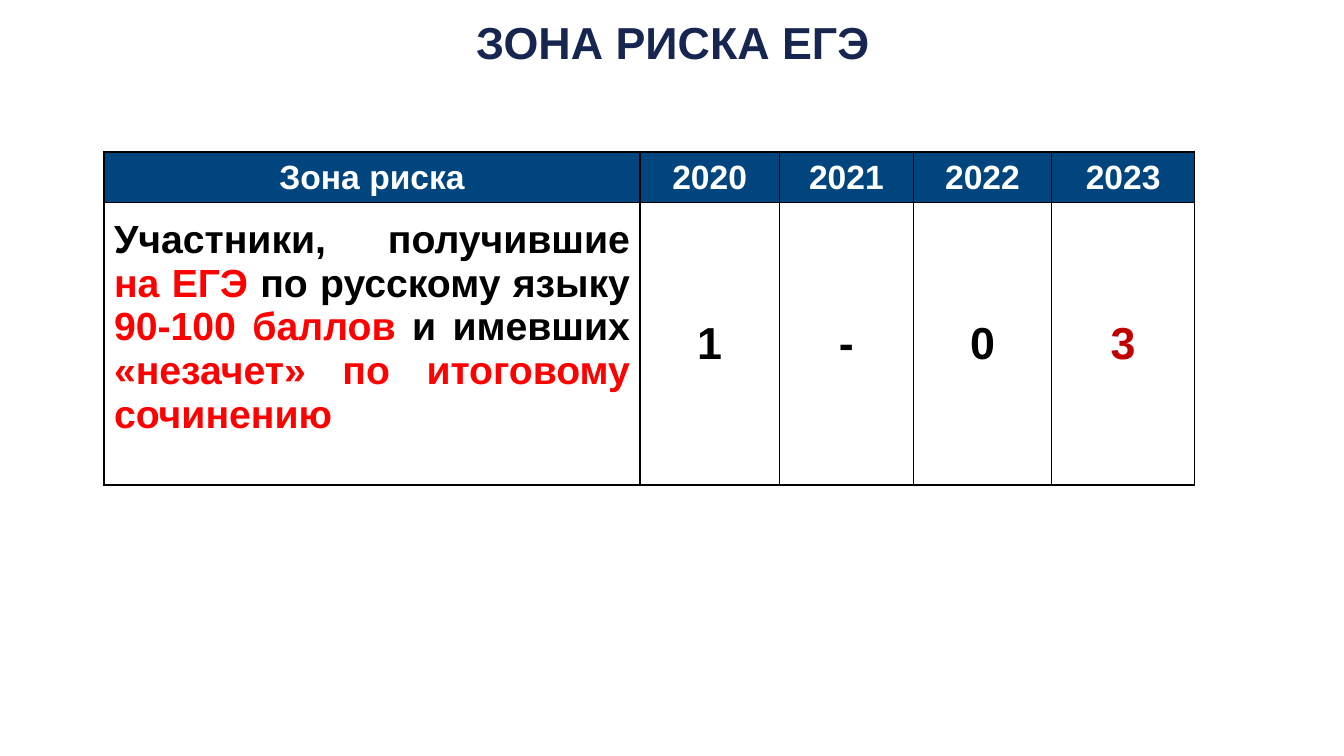
from lxml import etree
from pptx import Presentation
from pptx.dml.color import RGBColor
from pptx.enum import text
from pptx.oxml import ns
from pptx.util import Cm, Pt

FONT = "Arial"
NAVY = RGBColor(0x17, 0x25, 0x51)
BLUE = RGBColor(0x00, 0x45, 0x7E)
WHITE = RGBColor(0xFF, 0xFF, 0xFF)
BLACK = RGBColor(0x00, 0x00, 0x00)
RED = RGBColor(0xFF, 0x00, 0x00)
DARK_RED = RGBColor(0xC0, 0x00, 0x00)

HEADERS = ["Зона риска", "2020", "2021", "2022", "2023"]
CRITERION = [
    ("Участники, получившие ", BLACK),
    ("на ЕГЭ ", RED),
    ("по русскому языку ", BLACK),
    ("90-100 баллов ", RED),
    ("и имевших ", BLACK),
    ("«незачет» по итоговому сочинению", RED),
]
VALUES = [("1", BLACK), ("-", BLACK), ("0", BLACK), ("3", DARK_RED)]
COLUMN_WIDTHS = [13.51, 3.51, 3.38, 3.48, 3.61]
ROW_HEIGHTS = [1.28, 7.11]


def write_runs(paragraph, parts, size, alignment=text.PP_ALIGN.CENTER):
    paragraph.alignment = alignment
    for words, color in parts:
        run = paragraph.add_run()
        run.text = words
        run.font.name = FONT
        run.font.size = Pt(size)
        run.font.bold = True
        run.font.color.rgb = color


def add_borders(cell):
    properties = cell._tc.get_or_add_tcPr()
    for position, side in enumerate(("lnL", "lnR", "lnT", "lnB")):
        line = etree.Element(ns.qn(f"a:{side}"), w=str(Pt(1)))
        fill = etree.SubElement(line, ns.qn("a:solidFill"))
        etree.SubElement(fill, ns.qn("a:srgbClr"), val=str(BLACK))
        properties.insert(position, line)


def fill_cell(cell, parts, size, background, alignment=text.PP_ALIGN.CENTER):
    cell.fill.solid()
    cell.fill.fore_color.rgb = background
    cell.vertical_anchor = text.MSO_ANCHOR.MIDDLE
    write_runs(cell.text_frame.paragraphs[0], parts, size, alignment)
    add_borders(cell)


def add_title(slide, left, top, width, height):
    text_frame = slide.shapes.add_textbox(left, top, width, height).text_frame
    text_frame.word_wrap = True
    write_runs(text_frame.paragraphs[0], [("ЗОНА РИСКА ЕГЭ", NAVY)], 32)


def add_risk_table(slide, left, top):
    width, height = Cm(sum(COLUMN_WIDTHS)), Cm(sum(ROW_HEIGHTS))
    table = slide.shapes.add_table(
        len(ROW_HEIGHTS), len(COLUMN_WIDTHS), left, top, width, height
    ).table
    for column, column_width in zip(table.columns, COLUMN_WIDTHS):
        column.width = Cm(column_width)
    for row, row_height in zip(table.rows, ROW_HEIGHTS):
        row.height = Cm(row_height)

    # Header row
    for index, header in enumerate(HEADERS):
        fill_cell(table.cell(0, index), [(header, WHITE)], 24, BLUE)

    # Criterion, set slightly above the middle of its cell
    criterion_cell = table.cell(1, 0)
    criterion_cell.margin_bottom = Cm(0.97)
    fill_cell(criterion_cell, CRITERION, 28, WHITE, text.PP_ALIGN.JUSTIFY)

    # Number of participants by year
    for index, value in enumerate(VALUES, start=1):
        cell = table.cell(1, index)
        cell.margin_left = cell.margin_right = cell.margin_top = Cm(0.03)
        cell.margin_bottom = 0
        fill_cell(cell, [value], 32, WHITE)


def main():
    presentation = Presentation()
    presentation.slide_width = Cm(33.87)
    presentation.slide_height = Cm(19.05)
    slide = presentation.slides.add_slide(presentation.slide_layouts[6])
    add_title(slide, Cm(0.5), Cm(0.25), Cm(32.92), Cm(1.63))
    add_risk_table(slide, Cm(2.62), Cm(3.83))
    presentation.save("out.pptx")


if __name__ == "__main__":
    main()
